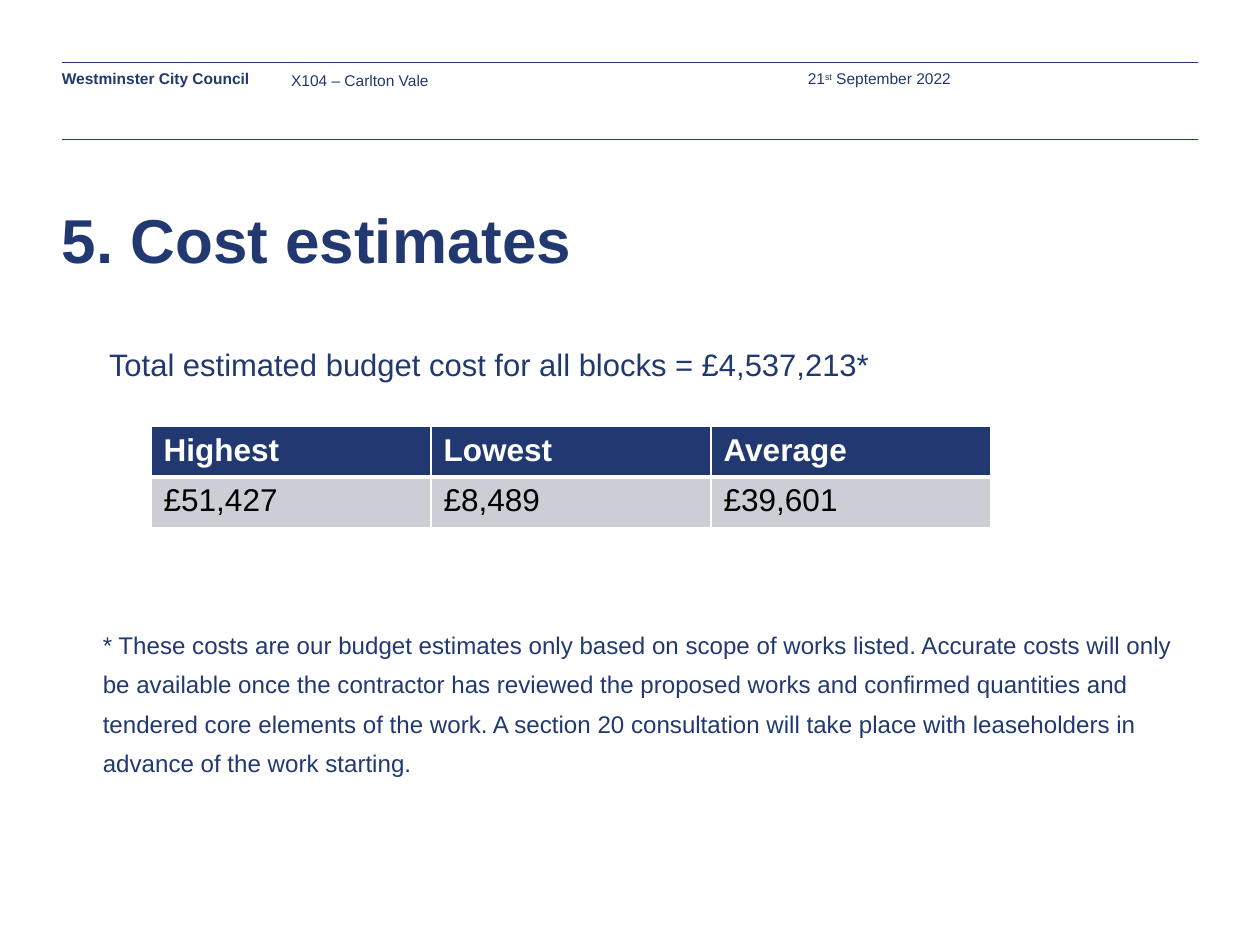
from lxml.etree import SubElement
from pptx import Presentation
from pptx.dml.color import RGBColor
from pptx.enum.shapes import MSO_CONNECTOR
from pptx.enum.text import MSO_ANCHOR, MSO_AUTO_SIZE, PP_ALIGN
from pptx.oxml.ns import qn
from pptx.util import Inches, Pt

NAVY, GREY, WHITE, BLACK = "213970", "CDCED5", "FFFFFF", "000000"


def colour(code):
    return RGBColor.from_string(code)


class CostSlide:
    """Holds the council style and the slide being built."""

    font_name = "Arial"

    def __init__(self, deck):
        self.slide = deck.slides.add_slide(deck.slide_layouts[1])

    def style(self, paragraph, size, code=NAVY, bold=False):
        for run in paragraph.runs:
            run.font.name = self.font_name
            run.font.size = Pt(size)
            run.font.bold = bold
            run.font.color.rgb = colour(code)

    def frame(self, shape, wrap=True, anchor=MSO_ANCHOR.TOP):
        text_frame = shape.text_frame
        text_frame.margin_left = text_frame.margin_right = 0
        text_frame.margin_top = text_frame.margin_bottom = 0
        text_frame.word_wrap = wrap
        text_frame.auto_size = MSO_AUTO_SIZE.NONE
        text_frame.vertical_anchor = anchor
        return text_frame

    def placeholder(self, holder, box, text, size, bold=False, leading=None):
        holder.left, holder.top, holder.width, holder.height = map(Inches, box)
        text_frame = self.frame(holder)
        text_frame.text = text
        paragraph = text_frame.paragraphs[0]
        properties = paragraph._p.get_or_add_pPr()
        properties.set("marL", "0")
        properties.set("indent", "0")
        SubElement(properties, qn("a:buNone"))
        paragraph.alignment = PP_ALIGN.LEFT
        paragraph.space_before = Pt(0)
        if leading:
            paragraph.line_spacing = Pt(leading)
        self.style(paragraph, size, bold=bold)

    def label(self, box, parts, size, bold=False, leading=None, wrap=True,
              anchor=MSO_ANCHOR.TOP, raised=()):
        text_box = self.slide.shapes.add_textbox(*map(Inches, box))
        paragraph = self.frame(text_box, wrap, anchor).paragraphs[0]
        for part in parts:
            run = paragraph.add_run()
            run.text = part
            if part in raised:
                run._r.get_or_add_rPr().set("baseline", "30000")
        if leading:
            paragraph.line_spacing = Pt(leading)
        self.style(paragraph, size, bold=bold)

    def rule(self, left, right, y):
        line = self.slide.shapes.add_connector(
            MSO_CONNECTOR.STRAIGHT, *map(Inches, (left, y, right, y)))
        line.line.color.rgb = colour(NAVY)
        line.line.width = Pt(0.25)
        SubElement(line._element.spPr, qn("a:effectLst"))

    def borders(self, cell, widths):
        properties = cell._tc.get_or_add_tcPr()
        for position, (side, width) in enumerate(zip("LRTB", widths)):
            edge = properties.makeelement(qn(f"a:ln{side}"), {"w": str(Pt(width))})
            fill = SubElement(edge, qn("a:solidFill"))
            SubElement(fill, qn("a:srgbClr"), val=WHITE)
            properties.insert(position, edge)

    def table(self, box, rows, size):
        costs = self.slide.shapes.add_table(
            len(rows), len(rows[0]), *map(Inches, box)).table
        costs.horz_banding = False
        for row_index, values in enumerate(rows):
            header = row_index == 0
            for column_index, value in enumerate(values):
                cell = costs.cell(row_index, column_index)
                cell.text = value
                cell.fill.solid()
                cell.fill.fore_color.rgb = colour(NAVY if header else GREY)
                self.style(cell.text_frame.paragraphs[0], size,
                           WHITE if header else BLACK, header)
                self.borders(cell, (1, 1, 1, 3) if header else (1, 1, 3, 1))


def main():
    deck = Presentation()
    deck.slide_width, deck.slide_height = Inches(10.17), Inches(7.66)
    page = CostSlide(deck)
    title, footnote = page.slide.placeholders

    for y in (0.5, 1.12):
        page.rule(0.5, 9.67, y)
    page.label((0.5, 0.56, 1.53, 0.15), ["Westminster City Council"], 9,
               bold=True, wrap=False)
    page.label((2.35, 0.56, 3.57, 0.41), ["X104 – Carlton Vale"], 9, leading=12)
    page.label((6.52, 0.56, 2.29, 0.15), ["21", "st", " September 2022"], 9,
               anchor=MSO_ANCHOR.MIDDLE, raised=("st",))

    page.placeholder(title, (0.5, 1.63, 9.17, 0.82), "5. Cost estimates", 36,
                     bold=True)
    page.label((0.88, 2.77, 8.79, 0.4),
               ["Total estimated budget cost for all blocks = £4,537,213*"],
               18, leading=23)
    page.table((1.22, 3.44, 6.78, 0.82),
               [("Highest", "Lowest", "Average"),
                ("£51,427", "£8,489", "£39,601")], 18.3)
    page.placeholder(
        footnote, (0.83, 5, 8.79, 2.03),
        "* These costs are our budget estimates only based on scope of works "
        "listed. Accurate costs will only be available once the contractor has "
        "reviewed the proposed works and confirmed quantities and tendered core "
        "elements of the work. A section 20 consultation will take place with "
        "leaseholders in advance of the work starting.", 14, leading=23)

    deck.save("out.pptx")


if __name__ == "__main__":
    main()
